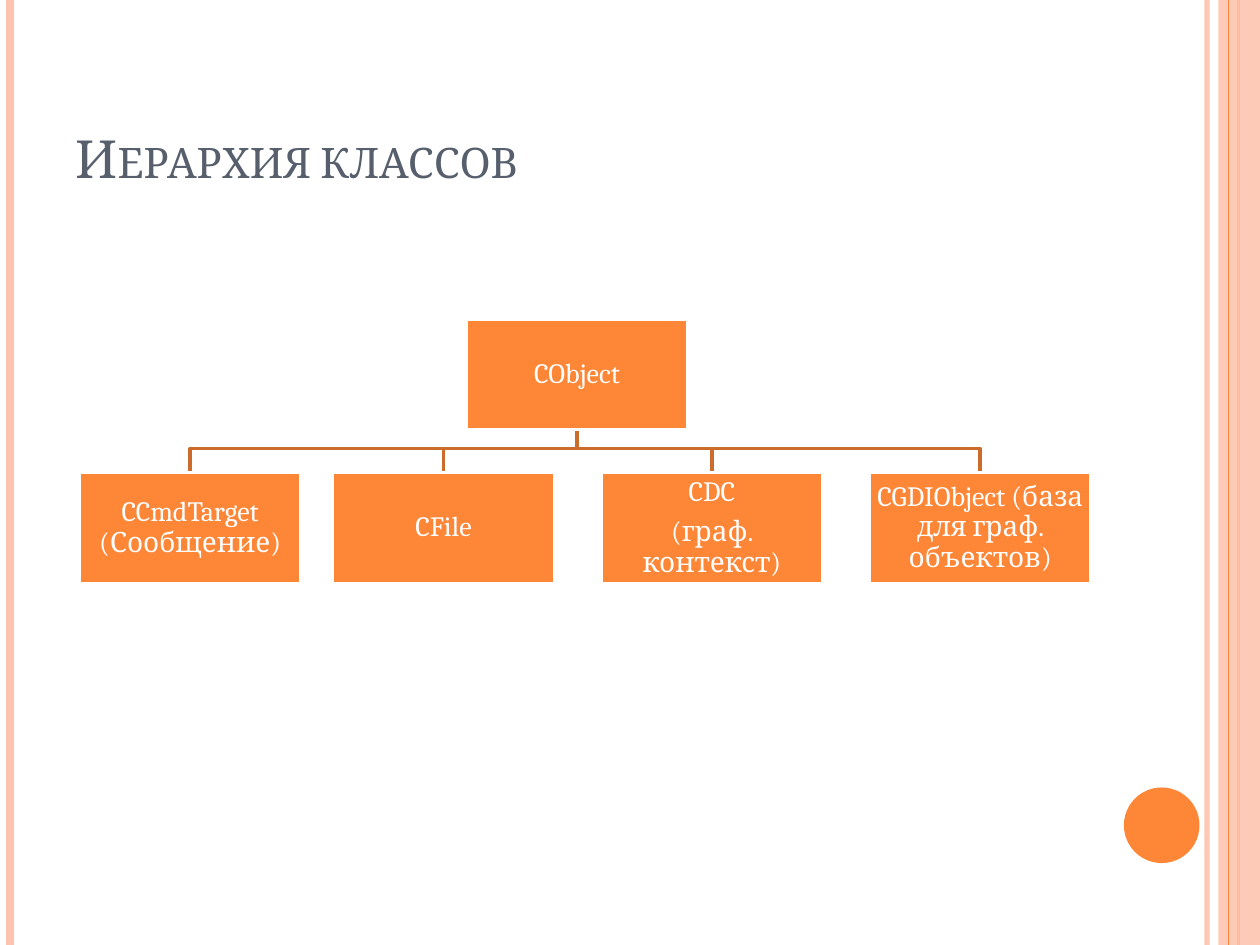
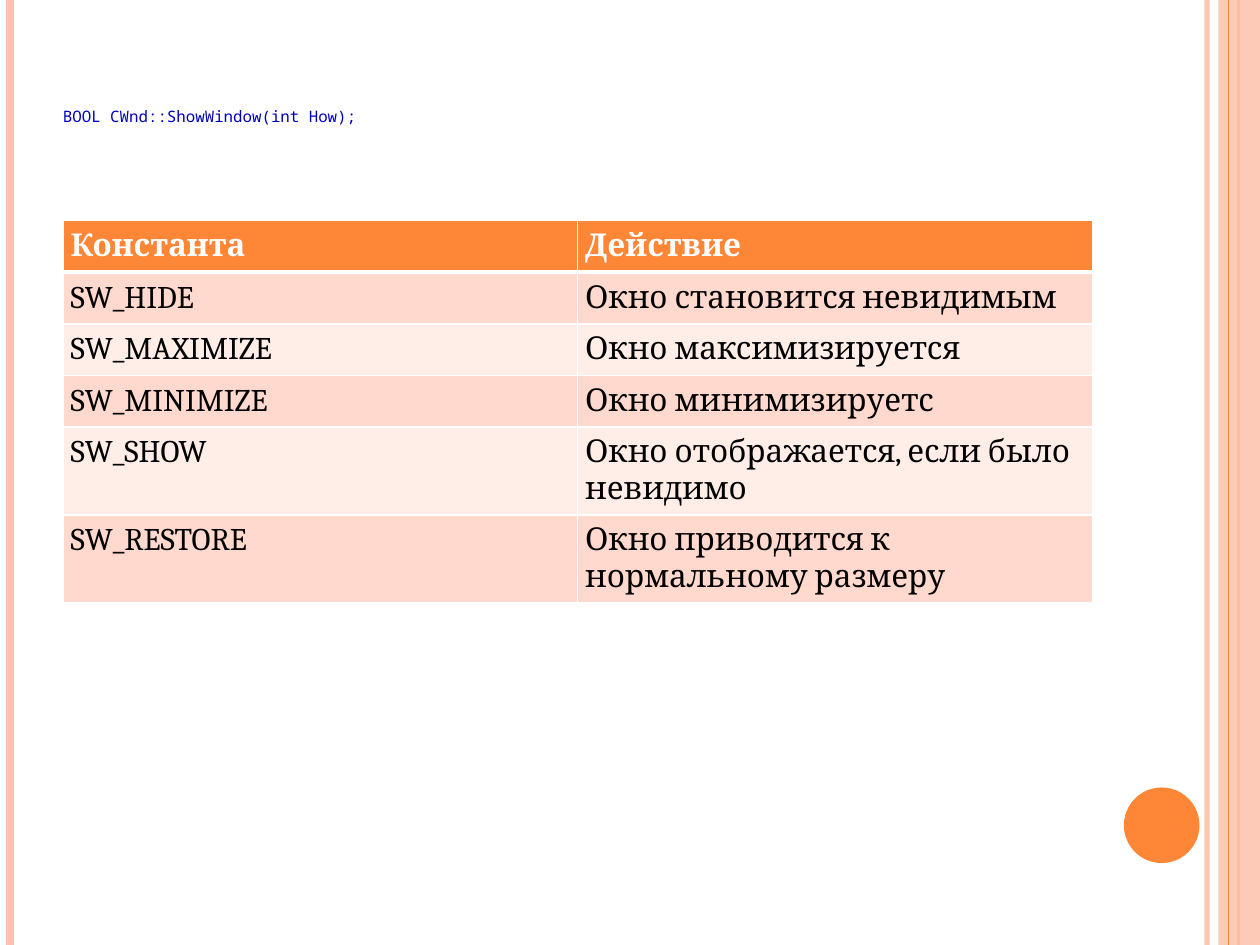
from dataclasses import dataclass

from lxml import etree
from pptx import Presentation
from pptx.dml.color import RGBColor
from pptx.enum.shapes import MSO_CONNECTOR, MSO_SHAPE
from pptx.enum.text import MSO_ANCHOR, PP_ALIGN
from pptx.oxml.ns import qn
from pptx.util import Inches, Pt

STRAIGHT = MSO_CONNECTOR.STRAIGHT
RECT, OVAL = MSO_SHAPE.RECTANGLE, MSO_SHAPE.OVAL
TOP, MIDDLE, BOTTOM = MSO_ANCHOR.TOP, MSO_ANCHOR.MIDDLE, MSO_ANCHOR.BOTTOM
LEFT, CENTER = PP_ALIGN.LEFT, PP_ALIGN.CENTER


@dataclass(frozen=True)
class Theme:
    accent: str = "FE8637"
    pale: str = "FEC3AE"
    branch: str = "CB6B2C"
    title: str = "575F6D"
    code: str = "0000BB"
    white: str = "FFFFFF"
    black: str = "000000"
    bands: tuple[str, str] = ("FFD9CE", "FFEDE8")
    font: str = "Cambria"
    mono: str = "Noto Sans Mono"
    title_size: int = 30
    code_size: int = 9
    node_size: int = 16
    table_size: int = 18


@dataclass(frozen=True)
class Stripe:
    x: float
    color: str
    width: float
    opacity: int = 100


@dataclass(frozen=True)
class Node:
    x: float
    y: float
    lines: tuple[str, ...]


T = Theme()
SLIDE_W, SLIDE_H = 10, 7.5
MARGIN, CONTENT_W = 0.5, 8.17

# Stripes below and above the translucent side band
STRIPES_BELOW = (
    Stripe(9.58, T.pale, 3, 93),
    Stripe(0.08, T.pale, 4.5),
    Stripe(9.83, T.accent, 1.5),
)
STRIPE_ABOVE = Stripe(9.75, T.accent, 0.75)

# Class tree
NODE_W, NODE_H, FORK_Y = 1.76, 0.88, 3.56
ROOT = Node(3.7, 2.53, ("CObject",))
CHILD_Y = 3.75
CHILDREN = (
    Node(0.63, CHILD_Y, ("CCmdTarget (Сообщение)",)),
    Node(2.64, CHILD_Y, ("CFile",)),
    Node(4.77, CHILD_Y, ("CDC", "(граф. контекст)")),
    Node(6.9, CHILD_Y, ("CGDIObject (база для граф. объектов)",)),
)

# Window constants
ROW_H, CELL_INSET = 0.41, 0.06
ROWS = (
    ("Константа", "Действие"),
    ("SW_HIDE", "Окно становится невидимым"),
    ("SW_MAXIMIZE", "Окно максимизируется"),
    ("SW_MINIMIZE", "Окно минимизируетс"),
    ("SW_SHOW", "Окно отображается, если было невидимо"),
    ("SW_RESTORE", "Окно приводится к нормальному размеру"),
)


def rgb(color: str) -> RGBColor:
    return RGBColor.from_string(color)


def set_opacity(fill_parent, percent: int) -> None:
    clr = next(fill_parent.iter(qn("a:srgbClr")))
    etree.SubElement(clr, qn("a:alpha")).set("val", str(percent * 1000))


def style_font(p, size: float, color: str, name: str = T.font, bold: bool = False) -> None:
    p.font.size = Pt(size)
    p.font.name = name
    p.font.bold = bold
    p.font.color.rgb = rgb(color)


def set_insets(target, x: float, y: float) -> None:
    target.margin_left = target.margin_right = Inches(x)
    target.margin_top = target.margin_bottom = Inches(y)


# Shared frame and titles
def add_stripe(slide, stripe: Stripe) -> None:
    x = Inches(stripe.x)
    line = slide.shapes.add_connector(STRAIGHT, x, 0, x, Inches(SLIDE_H))
    line.line.color.rgb = rgb(stripe.color)
    line.line.width = Pt(stripe.width)
    sp_pr = line._element.spPr
    if stripe.opacity < 100:
        set_opacity(sp_pr, stripe.opacity)
    etree.SubElement(sp_pr, qn("a:effectLst"))


def add_filled(slide, kind, x: float, y: float, w: float, h: float, color: str):
    sp = slide.shapes.add_shape(kind, Inches(x), Inches(y), Inches(w), Inches(h))
    sp.shadow.inherit = False
    sp.fill.solid()
    sp.fill.fore_color.rgb = rgb(color)
    sp.line.fill.background()
    return sp


def add_framed_slide(prs):
    slide = prs.slides.add_slide(prs.slide_layouts[6])
    for stripe in STRIPES_BELOW:
        add_stripe(slide, stripe)
    band = add_filled(slide, RECT, 9.67, 0, 0.33, SLIDE_H, T.pale)
    set_opacity(band._element.spPr, 87)
    add_stripe(slide, STRIPE_ABOVE)
    add_filled(slide, OVAL, 8.92, 6.25, 0.6, 0.6, T.accent)
    return slide


def add_title(slide, text: str, anchor, inset: float):
    box = slide.shapes.add_textbox(
        Inches(MARGIN), Inches(0.3), Inches(CONTENT_W), Inches(1.25))
    tf = box.text_frame
    tf.word_wrap = True
    tf.vertical_anchor = anchor
    set_insets(tf, inset, 0.05)
    p = tf.paragraphs[0]
    p.alignment = LEFT
    p.add_run().text = text
    return p


# Class tree
def add_branch(slide, parent: Node, child: Node) -> None:
    start_x, end_x = (Inches(n.x + NODE_W / 2) for n in (parent, child))
    fork_y = Inches(FORK_Y)
    builder = slide.shapes.build_freeform(start_x, Inches(parent.y + NODE_H))
    builder.add_line_segments(
        [(start_x, fork_y), (end_x, fork_y), (end_x, Inches(child.y))], close=False)
    sp = builder.convert_to_shape()
    sp.shadow.inherit = False
    sp.fill.background()
    sp.line.color.rgb = rgb(T.branch)
    sp.line.width = Pt(2)


def add_node(slide, node: Node) -> None:
    sp = add_filled(slide, RECT, node.x, node.y, NODE_W, NODE_H, T.accent)
    sp.line.color.rgb = rgb(T.white)
    sp.line.width = Pt(2)
    tf = sp.text_frame
    tf.word_wrap = True
    tf.vertical_anchor = MIDDLE
    set_insets(tf, 0.01, 0.01)
    tf.text = "\n".join(node.lines)
    for p in tf.paragraphs:
        p.alignment = CENTER
        p.line_spacing = 0.9
        p.space_after = Pt(T.node_size * 0.35)
        style_font(p, T.node_size, T.white)


def build_hierarchy(prs) -> None:
    slide = add_framed_slide(prs)
    p = add_title(slide, "Иерархия классов", BOTTOM, 0.1)
    style_font(p, T.title_size, T.title)
    p.runs[0].font._element.set("cap", "small")
    for child in reversed(CHILDREN):
        add_branch(slide, ROOT, child)
    for node in (ROOT, *CHILDREN):
        add_node(slide, node)


# Table of constants
def set_borders(cell, top: float, bottom: float) -> None:
    tc_pr = cell._tc.get_or_add_tcPr()
    for side, width in (("L", 1), ("R", 1), ("T", top), ("B", bottom)):
        ln = etree.SubElement(tc_pr, qn(f"a:ln{side}"), w=str(Pt(width)))
        fill = etree.SubElement(ln, qn("a:solidFill"))
        etree.SubElement(fill, qn("a:srgbClr"), val=T.white)


def fill_cell(cell, text: str, row: int) -> None:
    header = row == 0
    set_borders(cell, 3 if row == 1 else 1, 3 if header else 1)
    cell.fill.solid()
    cell.fill.fore_color.rgb = rgb(T.accent if header else T.bands[(row - 1) % 2])
    set_insets(cell, CELL_INSET, CELL_INSET)
    cell.vertical_anchor = TOP
    cell.text = text
    style_font(cell.text_frame.paragraphs[0], T.table_size,
               T.white if header else T.black, bold=header)


def build_constants(prs) -> None:
    slide = add_framed_slide(prs)
    table = slide.shapes.add_table(
        len(ROWS), len(ROWS[0]), Inches(MARGIN), Inches(1.75),
        Inches(CONTENT_W), Inches(ROW_H * len(ROWS))).table
    for r, texts in enumerate(ROWS):
        table.rows[r].height = Inches(ROW_H)
        for c, text in enumerate(texts):
            fill_cell(table.cell(r, c), text, r)
    p = add_title(slide, "BOOL CWnd::ShowWindow(int How);", MIDDLE, 0)
    style_font(p, T.code_size, T.code, T.mono)


def main() -> None:
    prs = Presentation()
    prs.slide_width, prs.slide_height = Inches(SLIDE_W), Inches(SLIDE_H)
    build_hierarchy(prs)
    build_constants(prs)
    prs.save("out.pptx")


if __name__ == "__main__":
    main()
